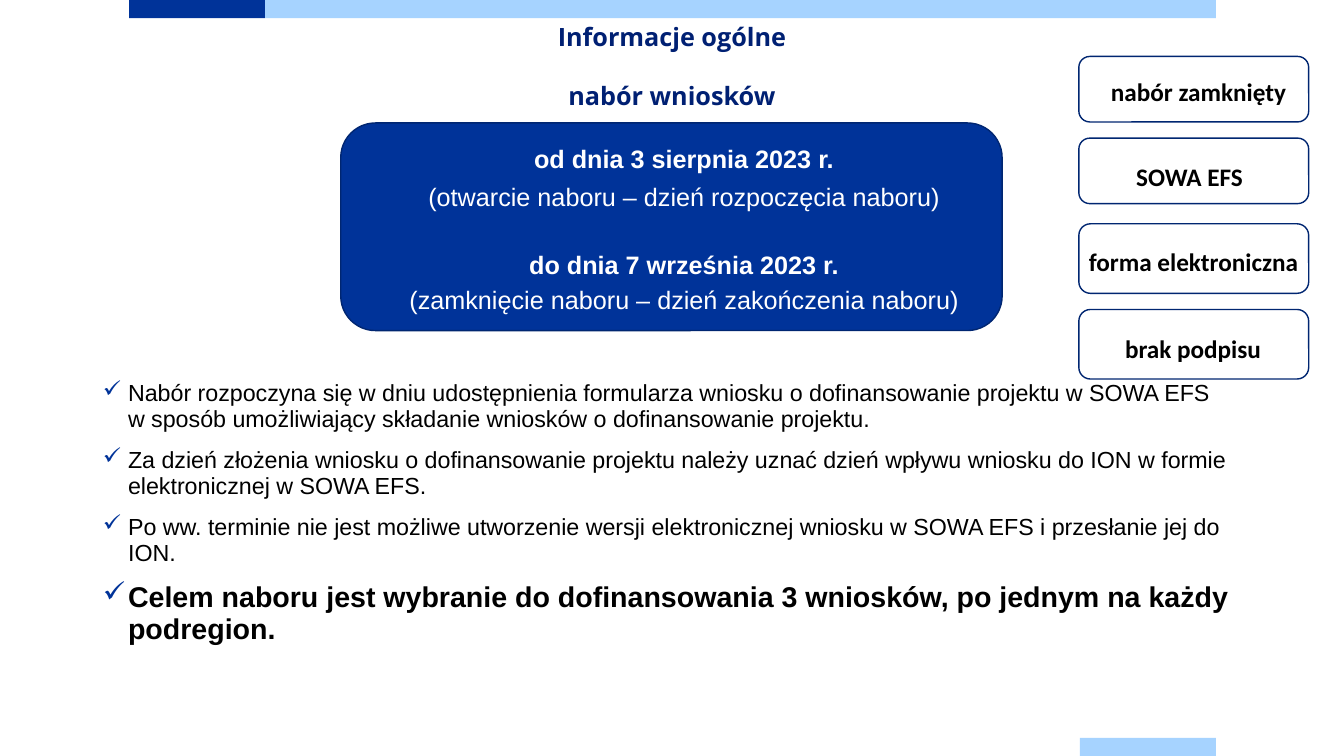
from lxml import etree
from pptx import Presentation
from pptx.dml.color import RGBColor
from pptx.enum import shapes, text
from pptx.oxml import ns
from pptx.util import Inches, Pt

NAVY, SKY, OUTLINE = "003399", "A6D3FF", "002671"
BLACK, WHITE = "000000", "FFFFFF"

BARS = [
    (1.28, 0, 1.35, NAVY),
    (2.63, 0, 9.43, SKY),
    (10.71, 7.32, 1.35, SKY),
]
DATES = [
    ("od dnia 3 sierpnia 2023 r.", True, 0, 2),
    ("(otwarcie naboru – dzień rozpoczęcia naboru)", False, 0, 0),
    ("do dnia 7 września 2023 r.", True, 24, 0),
    ("(zamknięcie naboru – dzień zakończenia naboru)", False, 0, 0),
]
RULES = [
    ("Nabór rozpoczyna się w dniu udostępnienia formularza wniosku o dofinansowanie "
     "projektu w SOWA EFS w sposób umożliwiający składanie wniosków o dofinansowanie projektu.",
     16.6, False),
    ("Za dzień złożenia wniosku o dofinansowanie projektu należy uznać dzień wpływu "
     "wniosku do ION w formie elektronicznej w SOWA EFS.", 16.6, False),
    ("Po ww. terminie nie jest możliwe utworzenie wersji elektronicznej wniosku "
     "w SOWA EFS i przesłanie jej do ION.", 16.6, False),
    ("Celem naboru jest wybranie do dofinansowania 3 wniosków, po jednym na każdy podregion.",
     20.4, True),
]
FEATURES = [
    ("nabór zamknięty", 0.56, 0.65, 10.92, 0.71),
    ("SOWA EFS", 1.37, 0.65, 11.17, 1.55),
    ("forma elektroniczna", 2.22, 0.69, 10.7, 2.39),
    ("brak podpisu", 3.07, 0.69, 11.06, 3.26),
]


def color(value):
    return RGBColor.from_string(value)


def add_box(slide, kind, left, top, width, height, fill=None, line=None):
    box = slide.shapes.add_shape(
        kind, Inches(left), Inches(top), Inches(width), Inches(height))
    box.shadow.inherit = False
    if fill:
        box.fill.solid()
        box.fill.fore_color.rgb = color(fill)
    else:
        box.fill.background()
    if line:
        box.line.color.rgb = color(line)
        box.line.width = Pt(1)
    else:
        box.line.fill.background()
    return box


def add_text(slide, left, top, width, height, inset=True):
    frame = slide.shapes.add_textbox(
        Inches(left), Inches(top), Inches(width), Inches(height)).text_frame
    frame.word_wrap = True
    if not inset:
        frame.margin_left = frame.margin_right = 0
        frame.margin_top = frame.margin_bottom = 0
    return frame


def next_paragraph(frame, index):
    return frame.add_paragraph() if index else frame.paragraphs[0]


def style(paragraph, size, name, ink, bold):
    font = paragraph.font
    font.size = Pt(size)
    font.name = name
    font.color.rgb = color(ink)
    font.bold = bold


def indent(paragraph, left, first=0):
    properties = paragraph._p.get_or_add_pPr()
    properties.set("marL", str(Inches(left)))
    properties.set("indent", str(Inches(first)))
    return properties


def add_check(paragraph):
    properties = indent(paragraph, 0.25, -0.25)
    tint = etree.SubElement(properties, ns.qn("a:buClr"))
    etree.SubElement(tint, ns.qn("a:srgbClr")).set("val", NAVY)
    etree.SubElement(properties, ns.qn("a:buChar")).set("char", "✓")


def add_heading(slide):
    frame = add_text(slide, 1.28, 0.25, 10.77, 1.05, inset=False)
    for index, line in enumerate(["Informacje ogólne", "nabór wniosków"]):
        paragraph = next_paragraph(frame, index)
        paragraph.text = line
        paragraph.alignment = text.PP_ALIGN.CENTER
        paragraph.line_spacing = 0.9
        if index:
            paragraph.space_before = Pt(22)
        style(paragraph, 18, "Open Sans", "002073", True)


def add_dates(slide):
    panel = add_box(slide, shapes.MSO_SHAPE.ROUNDED_RECTANGLE,
                    3.38, 1.22, 6.56, 2.06, NAVY, OUTLINE)
    frame = panel.text_frame
    frame.word_wrap = True
    frame.vertical_anchor = text.MSO_ANCHOR.MIDDLE
    for index, (line, bold, before, after) in enumerate(DATES):
        paragraph = next_paragraph(frame, index)
        paragraph.text = line
        paragraph.alignment = text.PP_ALIGN.CENTER
        indent(paragraph, 0.25)
        paragraph.line_spacing = 1.15
        paragraph.space_before = Pt(before)
        paragraph.space_after = Pt(after)
        style(paragraph, 18, "Arial", WHITE, bold)


def add_rules(slide):
    frame = add_text(slide, 1.02, 3.77, 11.18, 2.75, inset=False)
    for index, (rule, size, bold) in enumerate(RULES):
        paragraph = next_paragraph(frame, index)
        paragraph.text = rule
        add_check(paragraph)
        paragraph.line_spacing = 0.95
        if index:
            paragraph.space_before = Pt(10)
        style(paragraph, size, "Arial", BLACK, bold)


def add_feature(slide, label, top, height, label_left, label_top):
    add_box(slide, shapes.MSO_SHAPE.ROUNDED_RECTANGLE,
            10.7, top, 2.28, height, line=OUTLINE)
    paragraph = add_text(slide, label_left, label_top, 2.28, 0.4).paragraphs[0]
    paragraph.text = label
    style(paragraph, 18, "Calibri", BLACK, True)


def main():
    deck = Presentation()
    deck.slide_width = Inches(13.33)
    deck.slide_height = Inches(7.5)
    slide = deck.slides.add_slide(deck.slide_layouts[6])
    for left, top, width, fill in BARS:
        add_box(slide, shapes.MSO_SHAPE.RECTANGLE, left, top, width, 0.18, fill)
    add_heading(slide)
    add_rules(slide)
    add_dates(slide)
    for feature in FEATURES:
        add_feature(slide, *feature)
    deck.save("out.pptx")


if __name__ == "__main__":
    main()
